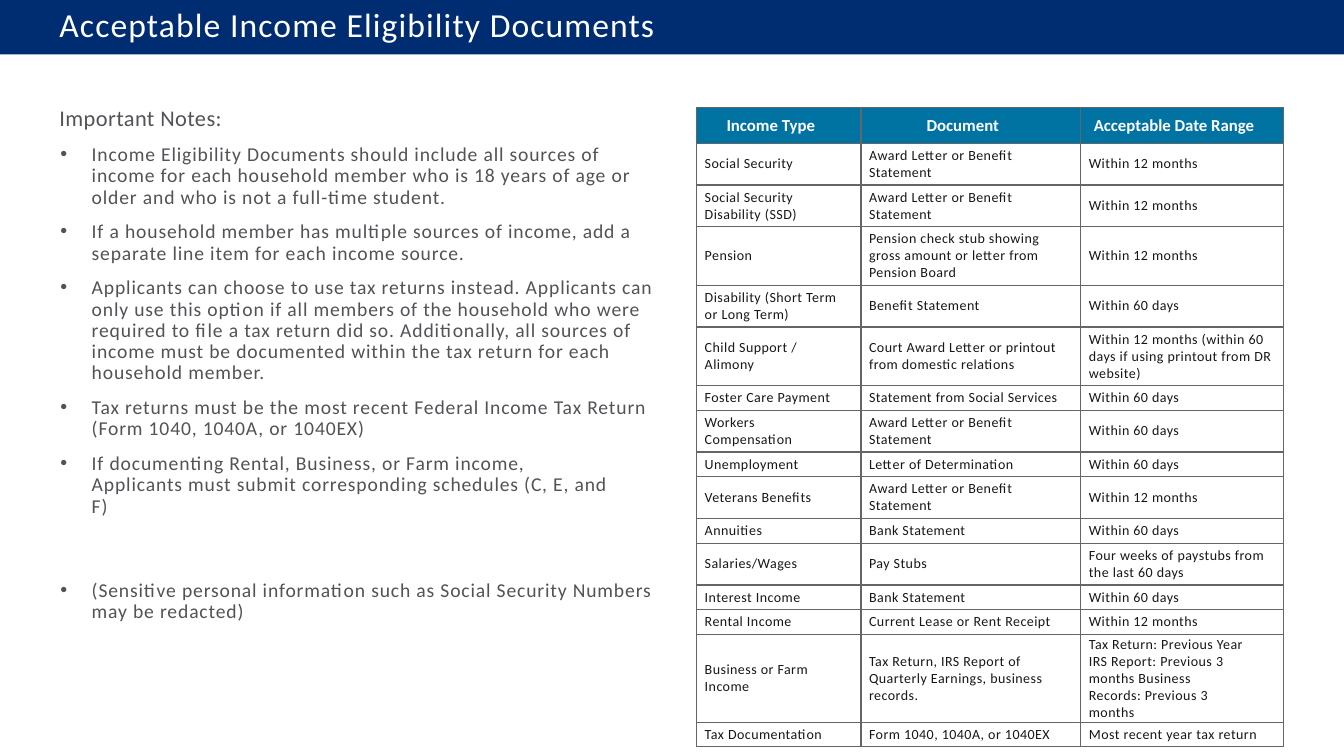
from lxml import etree
from pptx import Presentation
from pptx.dml.color import RGBColor
from pptx.enum import shapes, text
from pptx.oxml import ns
from pptx.util import Inches, Pt

NAVY = RGBColor(0x00, 0x2C, 0x71)
TEAL = RGBColor(0x00, 0x73, 0xA3)
WHITE = RGBColor(0xFF, 0xFF, 0xFF)
SLATE = RGBColor(0x51, 0x53, 0x57)
INK = RGBColor(0x17, 0x17, 0x17)
RULE = RGBColor(0x62, 0x66, 0x69)

NOTES = [
    "Income Eligibility Documents should include all sources of\nincome for each "
    "household member who is 18 years of age or older and who is not a full-time student.",
    "If a household member has multiple sources of income, add a "
    "separate line item for each income source.",
    "Applicants can choose to use tax returns instead. Applicants can only use this "
    "option if all members of the household who were required to file a tax return did so. "
    "Additionally, all sources of income must be documented within the tax return for each "
    "household member.",
    "Tax returns must be the most recent Federal Income Tax Return "
    "(Form 1040, 1040A, or 1040EX)",
    "If documenting Rental, Business, or Farm income,\n"
    "Applicants must submit corresponding schedules (C, E, and\nF)",
    "(Sensitive personal information such as Social Security Numbers may be redacted)",
]

AWARD = "Award Letter or Benefit\nStatement"
YEAR = "Within 12 months"
TWO_MONTHS = "Within 60 days"
HEADINGS = ("Income Type", "Document", "Acceptable Date Range")
INCOME_ROWS = [
    ("Social Security", AWARD, YEAR),
    ("Social Security\nDisability (SSD)", AWARD, YEAR),
    ("Pension", "Pension check stub showing\ngross amount or letter from\nPension Board", YEAR),
    ("Disability (Short Term\nor Long Term)", "Benefit Statement", TWO_MONTHS),
    ("Child Support /\nAlimony", "Court Award Letter or printout\nfrom domestic relations",
     "Within 12 months (within 60\ndays if using printout from DR\nwebsite)"),
    ("Foster Care Payment", "Statement from Social Services", TWO_MONTHS),
    ("Workers\nCompensation", AWARD, TWO_MONTHS),
    ("Unemployment", "Letter of Determination", TWO_MONTHS),
    ("Veterans Benefits", AWARD, YEAR),
    ("Annuities", "Bank Statement", TWO_MONTHS),
    ("Salaries/Wages", "Pay Stubs", "Four weeks of paystubs from\nthe last 60 days"),
    ("Interest Income", "Bank Statement", TWO_MONTHS),
    ("Rental Income", "Current Lease or Rent Receipt", YEAR),
    ("Business or Farm\nIncome",
     "Tax Return, IRS Report of\nQuarterly Earnings, business\nrecords.",
     "Tax Return: Previous Year\nIRS Report: Previous 3\nmonths Business\n"
     "Records: Previous 3\nmonths"),
    ("Tax Documentation", "Form 1040, 1040A, or 1040EX", "Most recent year tax return"),
]
COLUMN_WIDTHS = (1.63, 2.18, 2.01)
HEADER_HEIGHT = 0.35
ROW_HEIGHTS = {1: 0.245, 2: 0.415, 3: 0.58, 5: 0.87}  # by number of text lines


def write(paragraph, words, *, size, color, bold=False, tracking=0.0, before=0,
          line=None, align=text.PP_ALIGN.LEFT, indent=0, bullet=None):
    """Fill a paragraph; a newline in words becomes a line break."""
    paragraph.text = words
    paragraph.alignment = align
    paragraph.space_before = Pt(before)
    paragraph.space_after = Pt(0)
    if line:
        paragraph.line_spacing = Pt(line)
    for run in paragraph.runs:
        run.font.name = "Calibri"
        run.font.size = Pt(size)
        run.font.bold = bold
        run.font.color.rgb = color
        run._r.get_or_add_rPr().set("spc", str(round(tracking * 100)))
    properties = paragraph._p.get_or_add_pPr()
    properties.set("marL", str(Inches(indent)))
    properties.set("indent", str(-Inches(0.31) if bullet else 0))
    if bullet:
        etree.SubElement(properties, ns.qn("a:buChar"), char=bullet)
    else:
        etree.SubElement(properties, ns.qn("a:buNone"))


class EligibilitySlide:
    """The slide and the style its elements share."""

    def __init__(self, deck):
        self.slide = deck.slides.add_slide(deck.slide_layouts[1])
        self.width = deck.slide_width

    def banner(self, height):
        band = self.slide.shapes.add_shape(
            shapes.MSO_SHAPE.RECTANGLE, 0, 0, self.width, Inches(height))
        band.shadow.inherit = False
        band.fill.solid()
        band.fill.fore_color.rgb = NAVY
        band.line.fill.background()
        self.slide.shapes._spTree.insert(2, band._element)

    def place(self, holder, left, top, width, height, inset, anchor):
        """Move a placeholder and return its text frame."""
        holder.left, holder.top = Inches(left), Inches(top)
        holder.width, holder.height = Inches(width), Inches(height)
        frame = holder.text_frame
        frame.margin_left = frame.margin_right = frame.margin_bottom = 0
        frame.margin_top = Inches(inset)
        frame.word_wrap = True
        frame.auto_size = text.MSO_AUTO_SIZE.NONE
        frame.vertical_anchor = anchor
        return frame

    def title(self, words):
        frame = self.place(self.slide.shapes.title, 0.58, 0.02, 6.5, 0.43, 0.01,
                           text.MSO_ANCHOR.MIDDLE)
        write(frame.paragraphs[0], words, size=24, color=WHITE, tracking=0.8, indent=0.01)

    def notes(self, heading, items):
        frame = self.place(self.slide.placeholders[1], 0.58, 0.89, 5.95, 5.4, 0.14,
                           text.MSO_ANCHOR.TOP)
        write(frame.paragraphs[0], heading, size=16, color=SLATE, tracking=0.3, indent=0.01)
        for item in items:
            write(frame.add_paragraph(), item, size=14, color=SLATE, tracking=0.6,
                  before=45 if item is items[-1] else 9.6, line=15.2,
                  indent=0.33, bullet="•")

    def cell(self, cell, words, header):
        cell.vertical_anchor = text.MSO_ANCHOR.MIDDLE
        cell.margin_top = cell.margin_bottom = Inches(0.01)
        cell.margin_left = Inches(0 if header else 0.08)
        cell.margin_right = Inches(0.16 if header else 0)
        if header:
            write(cell.text_frame.paragraphs[0], words, size=12, color=WHITE, bold=True,
                  align=text.PP_ALIGN.CENTER)
        else:
            write(cell.text_frame.paragraphs[0], words, size=10, color=INK, tracking=0.35)
        properties = cell._tc.get_or_add_tcPr()
        for side in ("lnL", "lnR", "lnT", "lnB"):
            border = etree.SubElement(properties, ns.qn(f"a:{side}"), w=str(Pt(1)))
            fill = etree.SubElement(border, ns.qn("a:solidFill"))
            etree.SubElement(fill, ns.qn("a:srgbClr"), val=str(RULE))
        if header:
            cell.fill.solid()
            cell.fill.fore_color.rgb = TEAL
        else:
            cell.fill.background()

    def table(self, left, top, headings, rows):
        heights = [HEADER_HEIGHT] + [
            ROW_HEIGHTS[max(words.count("\n") + 1 for words in row)] for row in rows]
        grid = self.slide.shapes.add_table(
            len(heights), len(headings), Inches(left), Inches(top),
            Inches(sum(COLUMN_WIDTHS)), Inches(sum(heights))).table
        grid.horz_banding = False
        for column, width in zip(grid.columns, COLUMN_WIDTHS):
            column.width = Inches(width)
        for number, (height, row) in enumerate(zip(heights, [headings, *rows])):
            grid.rows[number].height = Inches(height)
            for column, words in enumerate(row):
                self.cell(grid.cell(number, column), words, header=number == 0)


def main():
    deck = Presentation()
    deck.slide_width, deck.slide_height = Inches(13.33), Inches(7.5)
    page = EligibilitySlide(deck)
    page.banner(0.54)
    page.title("Acceptable Income Eligibility Documents")
    page.notes("Important Notes:", NOTES)
    page.table(6.91, 1.07, HEADINGS, INCOME_ROWS)
    deck.save("out.pptx")


if __name__ == "__main__":
    main()
